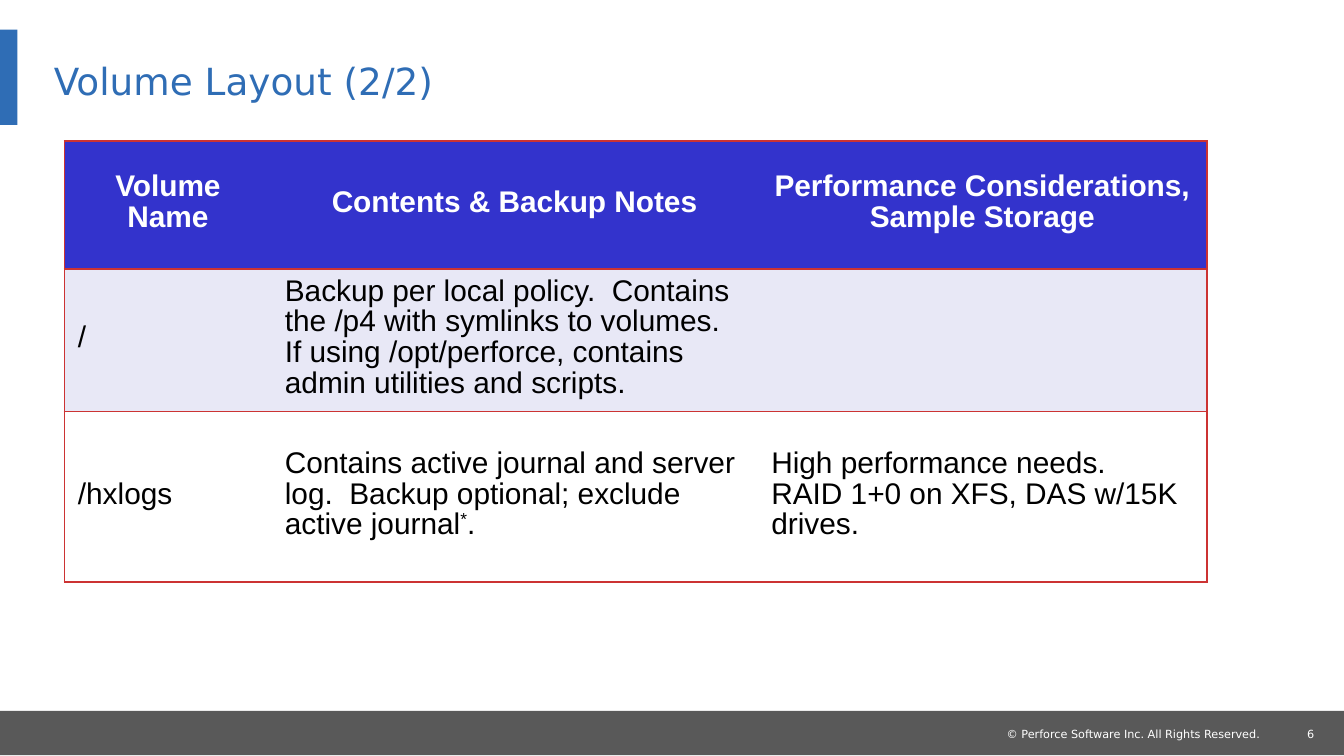
from lxml import etree
from pptx import Presentation, util as u
from pptx.dml.color import RGBColor
from pptx.enum import shapes, text
from pptx.oxml.ns import qn

HUES = {
    "blue": "2F6DB5", "gray": "595959", "white": "FFFFFF", "black": "000000",
    "head": "3333CC", "band": "E8E8F6", "edge": "CC3333",
}
SANS = "DejaVu Sans"
COLS = [1.54, 3.62, 3.34]
ROWS = [0.95, 0.8, 1.27]
FILLS = ["head", "band", "white"]
CELLS = [
    ["Volume Name", "Contents & Backup Notes",
     "Performance Considerations, Sample Storage"],
    ["/", "Backup per local policy.  Contains the /p4 with symlinks to volumes. "
     "If using /opt/perforce, contains admin utilities and scripts.", ""],
    ["/hxlogs", "Contains active journal and server log.  Backup optional; "
     "exclude active journal*.",
     "High performance needs.  RAID 1+0 on XFS, DAS w/15K drives."],
]


def color(name):
    return RGBColor.from_string(HUES[name])


def box(*sides):
    return [u.Inches(side) for side in sides]


def style(run, size, face, hue, bold=False):
    font = run.font
    font.size, font.name, font.bold = u.Pt(size), face, bold
    font.color.rgb = color(hue)


def trim(frame):
    """Remove all inner margins."""
    frame.margin_left = frame.margin_right = 0
    frame.margin_top = frame.margin_bottom = 0


def add_bar(slide, hue, *sides):
    bar = slide.shapes.add_shape(shapes.MSO_SHAPE.RECTANGLE, *box(*sides))
    bar.shadow.inherit = False
    bar.fill.solid()
    bar.fill.fore_color.rgb = color(hue)
    bar.line.fill.background()


def add_note(slide, words, align, *sides):
    frame = slide.shapes.add_textbox(*box(*sides)).text_frame
    trim(frame)
    frame.word_wrap = False
    frame.text = words
    line = frame.paragraphs[0]
    line.alignment = align
    style(line.runs[0], 6, SANS, "white")


def add_title(slide, words):
    title = slide.shapes.title
    title.left, title.top, title.width, title.height = box(0.4, 0.28, 7.74, 0.6)
    frame = title.text_frame
    trim(frame)
    frame.auto_size = text.MSO_AUTO_SIZE.NONE
    frame.vertical_anchor = text.MSO_ANCHOR.MIDDLE
    frame.text = words
    line = frame.paragraphs[0]
    line.alignment = text.PP_ALIGN.LEFT
    line.line_spacing = u.Pt(27)
    style(line.runs[0], 20, SANS, "blue")


def set_edges(cell, col):
    """Rule the rows and the outer sides, with no inner vertical lines."""
    shown = {"L": col == 0, "R": col == len(COLS) - 1, "T": True, "B": True}
    props = cell._tc.get_or_add_tcPr()
    for spot, (side, drawn) in enumerate(shown.items()):
        edge = etree.Element(qn("a:ln" + side), w=str(u.Pt(1)))
        if drawn:
            fill = etree.SubElement(edge, qn("a:solidFill"))
            etree.SubElement(fill, qn("a:srgbClr"), val=HUES["edge"])
        else:
            etree.SubElement(edge, qn("a:noFill"))
        props.insert(spot, edge)


def fill_cell(cell, words, row):
    head = row == 0
    cell.fill.solid()
    cell.fill.fore_color.rgb = color(FILLS[row])
    cell.vertical_anchor = text.MSO_ANCHOR.MIDDLE
    cell.margin_left = cell.margin_right = u.Inches(0.1)
    cell.margin_top, cell.margin_bottom = box(0.02, 0.05)
    line = cell.text_frame.paragraphs[0]
    line.alignment = text.PP_ALIGN.CENTER if head else text.PP_ALIGN.LEFT
    line.line_spacing = 0.93
    for part in filter(None, words.partition("*")):
        run = line.add_run()
        run.text = part
        style(run, 16, "Arial", "white" if head else "black", head)
        if part == "*":
            run._r.get_or_add_rPr().set("baseline", "30000")


def add_grid(slide):
    frame = slide.shapes.add_table(
        len(ROWS), len(COLS), *box(0.48, 1.05, sum(COLS), 3.28))
    grid = frame.table
    for col, width in zip(grid.columns, COLS):
        col.width = u.Inches(width)
    for row, height in zip(grid.rows, ROWS):
        row.height = u.Inches(height)
    frame.height = u.Inches(3.28)
    for row, line in enumerate(CELLS):
        for col, words in enumerate(line):
            cell = grid.cell(row, col)
            fill_cell(cell, words, row)
            set_edges(cell, col)


def main():
    deck = Presentation()
    deck.slide_width = u.Inches(10)
    deck.slide_height = deck.slide_width * 9 // 16
    slide = deck.slides.add_slide(deck.slide_layouts[5])
    add_bar(slide, "gray", 0, 5.29, 10, 0.33)
    add_note(slide, "6", text.PP_ALIGN.RIGHT, 9.35, 5.41, 0.43, 0.1)
    add_note(slide, "© Perforce Software Inc. All Rights Reserved.",
             text.PP_ALIGN.LEFT, 7.49, 5.41, 1.94, 0.1)
    add_bar(slide, "blue", 0, 0.22, 0.13, 0.71)
    add_title(slide, "Volume Layout (2/2)")
    add_grid(slide)
    deck.save("out.pptx")


if __name__ == "__main__":
    main()
